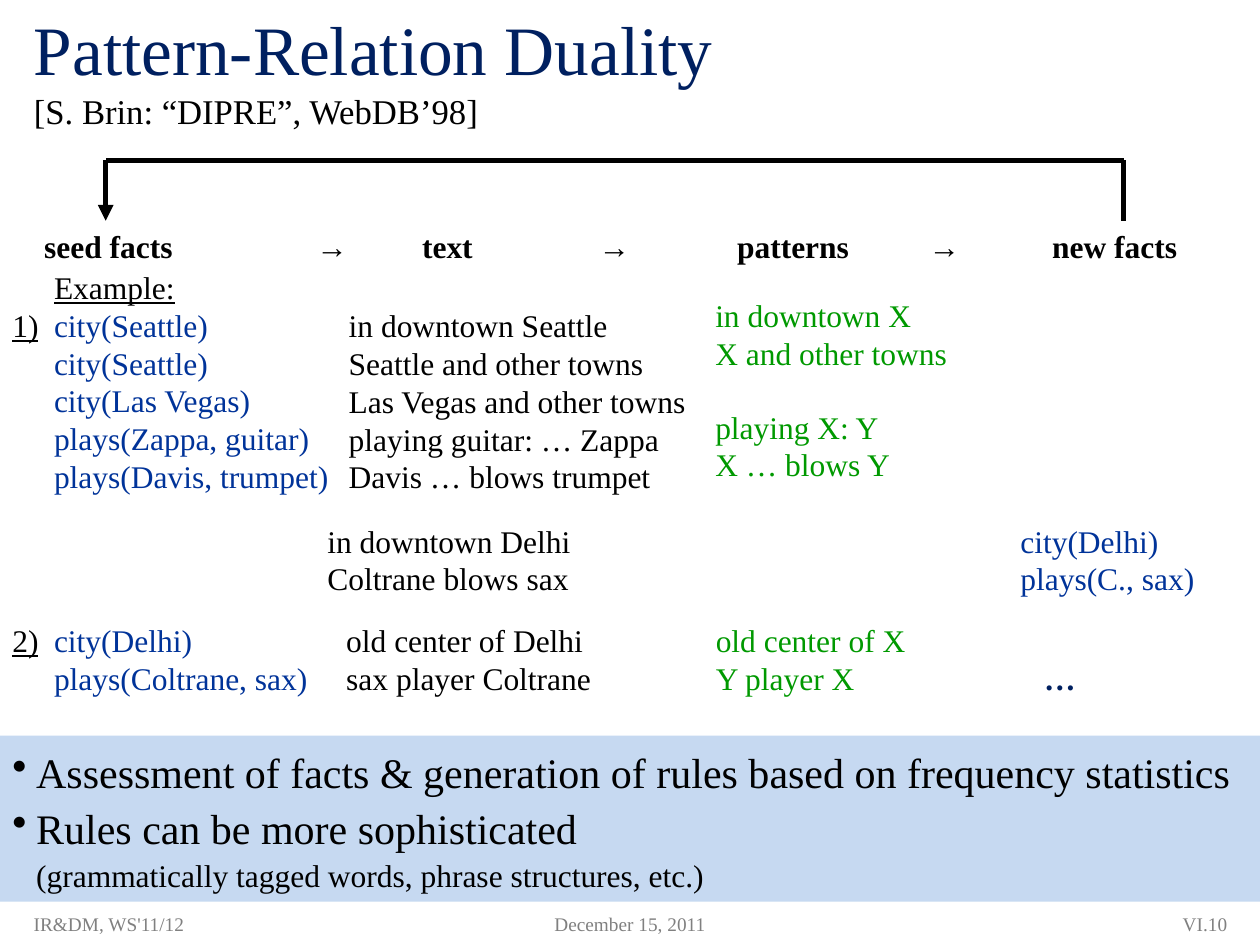
from lxml.etree import SubElement
from pptx import Presentation
from pptx.dml.color import RGBColor
from pptx.enum.shapes import MSO_CONNECTOR, MSO_SHAPE
from pptx.enum.text import MSO_ANCHOR, MSO_AUTO_SIZE, PP_ALIGN
from pptx.oxml.ns import qn
from pptx.util import Cm, Pt

BLACK = RGBColor(0x00, 0x00, 0x00)
WHITE = RGBColor(0xFF, 0xFF, 0xFF)
NAVY = RGBColor(0x00, 0x20, 0x60)
BLUE = RGBColor(0x00, 0x33, 0x99)
GREEN = RGBColor(0x00, 0x99, 0x00)
GRAY = RGBColor(0x80, 0x80, 0x80)
PALE_BLUE = RGBColor(0xC6, 0xD9, 0xF1)

BODY = {"name": "Times New Roman", "size": Pt(18)}
BOLD = {**BODY, "bold": True}
UNDERLINED = {**BODY, "underline": True}
BULLET = {**BODY, "size": Pt(24)}
FOOTER = {**BODY, "size": Pt(11)}


def add_run(p, text, color=BLACK, fmt=BODY):
    """Append a formatted run to a paragraph."""
    r = p.add_run()
    r.text = text
    for key, value in fmt.items():
        setattr(r.font, key, value)
    r.font.color.rgb = color


def add_box(s, box, rows, fill=None, tabs=(), wrap=True):
    """Add a text box or filled rectangle holding one paragraph per row of runs."""
    size = [Cm(v) for v in box]
    if fill is None:
        sp = s.shapes.add_textbox(*size)
    else:
        sp = s.shapes.add_shape(MSO_SHAPE.RECTANGLE, *size)
        sp.shadow.inherit = False
        sp.fill.solid()
        sp.fill.fore_color.rgb = fill
        sp.line.fill.background()
    tf = sp.text_frame
    tf.word_wrap = wrap
    tf.vertical_anchor = MSO_ANCHOR.TOP
    for i, row in enumerate(rows):
        p = tf.add_paragraph() if i else tf.paragraphs[0]
        p.alignment = PP_ALIGN.LEFT
        for run in row:
            add_run(p, *run)
        if tabs:
            tab_list = SubElement(p._p.get_or_add_pPr(), qn("a:tabLst"))
            for pos in tabs:
                SubElement(tab_list, qn("a:tab"), pos=str(Cm(pos)), algn="l")
    return tf


def add_title(s, box):
    """Place the title with its citation line."""
    sp = s.shapes.title
    sp.left, sp.top, sp.width, sp.height = [Cm(v) for v in box]
    tf = sp.text_frame
    tf.auto_size = MSO_AUTO_SIZE.NONE
    tf.word_wrap = True
    tf.vertical_anchor = MSO_ANCHOR.MIDDLE
    tf.margin_bottom = Cm(0.94)
    p = tf.paragraphs[0]
    p.alignment = PP_ALIGN.LEFT
    add_run(p, "Pattern-Relation Duality", NAVY, {**BODY, "size": Pt(39.6)})
    p.add_line_break()
    add_run(p, "[S. Brin: “DIPRE”, WebDB’98]", BLACK, {**BODY, "size": Pt(19.8)})


def add_loop(s, box):
    """Draw the feedback arrow from new facts back to seed facts."""
    x, y, w, h = box
    points = [(x + w, y + h), (x + w, y), (x, y), (x, y + h)]
    for start, end in zip(points, points[1:]):
        line = s.shapes.add_connector(MSO_CONNECTOR.STRAIGHT, *[Cm(v) for v in start + end])
        line.line.color.rgb = BLACK
        line.line.width = Pt(3)
        SubElement(line._element.spPr, qn("a:effectLst"))
    SubElement(line.line._get_or_add_ln(), qn("a:tailEnd"), type="triangle")


def add_steps(s, box):
    """Write the row of process steps."""
    steps = ["seed facts", "→", "text", "→", "patterns", "→", "new facts"]
    add_box(s, box, [[("\t".join(steps), BLACK, BOLD)]],
            tabs=(5.49, 7.62, 11.18, 13.97, 17.83, 20.32))


def add_first_round(s, box):
    """Write the seed facts, matching texts, patterns and new facts of round one."""
    x, y, w, h = box
    facts = ["city(Seattle)", "city(Seattle)", "city(Las Vegas)",
             "plays(Zappa, guitar)", "plays(Davis, trumpet)"]
    texts = ["in downtown Seattle", "Seattle and other towns", "Las Vegas and other towns",
             "playing guitar: … Zappa", "Davis … blows trumpet"]
    patterns = ["in downtown X", "X and other towns", "playing X: Y", "X … blows Y"]
    found = [("in downtown Delhi", "city(Delhi)"), ("Coltrane blows sax", "plays(C., sax)")]

    add_box(s, (x + 0.84, y, 6.55, 4.88),
            [[("Example:", BLACK, UNDERLINED)]] + [[(t, BLUE)] for t in facts])
    add_box(s, (x + 6.78, y + 0.77, 16.71, 4.11), [[(t,)] for t in texts], fill=WHITE)
    tf = add_box(s, (x + 14.17, y + 0.56, w - 14.17, 4.11), [[(t, GREEN)] for t in patterns])
    tf.paragraphs[2].space_before = Pt(20.7)
    add_box(s, (x, y + 5.11, 24.77, h - 5.11),
            [[("\t" + text + "\t",), (fact, BLUE)] for text, fact in found],
            tabs=(6.35, 20.32))
    add_box(s, (x, y + 0.77, 1.04, 1.02), [[("1)", BLACK, UNDERLINED)]], wrap=False)


def add_second_round(s, box):
    """Write the facts, texts and patterns of round two."""
    x, y, w, h = box
    rows = [("city(Delhi)", "old center of Delhi", "old center of X"),
            ("plays(Coltrane, sax)", "sax player Coltrane", "Y player X")]
    runs = [[(fact + "\t", BLUE), (text + "\t",), (pattern, GREEN)]
            for fact, text, pattern in rows]
    runs[-1].append(("\t…", NAVY, BOLD))
    add_box(s, (x + 0.84, y, w - 0.84, h), runs, tabs=(5.89, 13.34, 19.96))
    add_box(s, (x, y, 1.04, 1.02), [[("2)", BLACK, UNDERLINED)]], wrap=False)


def add_summary(s, box):
    """Write the bulleted conclusions on a tinted band."""
    rows = [[("Assessment of facts & generation of rules based on frequency statistics",
              BLACK, BULLET)],
            [("Rules can be more sophisticated", BLACK, BULLET)],
            [("(grammatically tagged words, phrase structures, etc.)",)]]
    tf = add_box(s, box, rows, fill=PALE_BLUE)
    for i, p in enumerate(tf.paragraphs):
        p.line_spacing = 1.1
        pPr = p._p.get_or_add_pPr()
        pPr.set("marL", str(Cm(0.48)))
        pPr.set("indent", str(Cm(-0.48) if i < 2 else 0))
        if i < 2:
            SubElement(pPr, qn("a:buChar"), char="•")


def add_footer(s, box):
    """Write the course, date and page number."""
    x, y, w, h = box
    parts = [("IR&DM, WS'11/12", 0, 7.62, PP_ALIGN.LEFT),
             ("December 15, 2011", 9.31, 5.92, PP_ALIGN.CENTER),
             ("VI.10", w - 5.51, 5.51, PP_ALIGN.RIGHT)]
    for text, left, width, align in parts:
        tf = add_box(s, (x + left, y, width, h), [[(text, GRAY, FOOTER)]])
        tf.vertical_anchor = MSO_ANCHOR.MIDDLE
        tf.paragraphs[0].alignment = align


def main():
    """Build and save the slide."""
    prs = Presentation()
    prs.slide_width, prs.slide_height = Cm(25.4), Cm(19.05)
    s = prs.slides.add_slide(prs.slide_layouts[5])
    add_title(s, (0.43, 0.84, 24.56, 1.9))
    add_steps(s, (0.64, 4.45, 24.76, 1.02))
    add_first_round(s, (0, 5.28, 25.4, 6.89))
    add_loop(s, (2.13, 3.23, 20.52, 1.22))
    add_second_round(s, (0, 12.4, 24.54, 1.8))
    add_summary(s, (0, 14.83, 25.4, 3.35))
    add_footer(s, (0.43, 18.21, 24.56, 0.84))
    prs.save("out.pptx")


if __name__ == "__main__":
    main()
